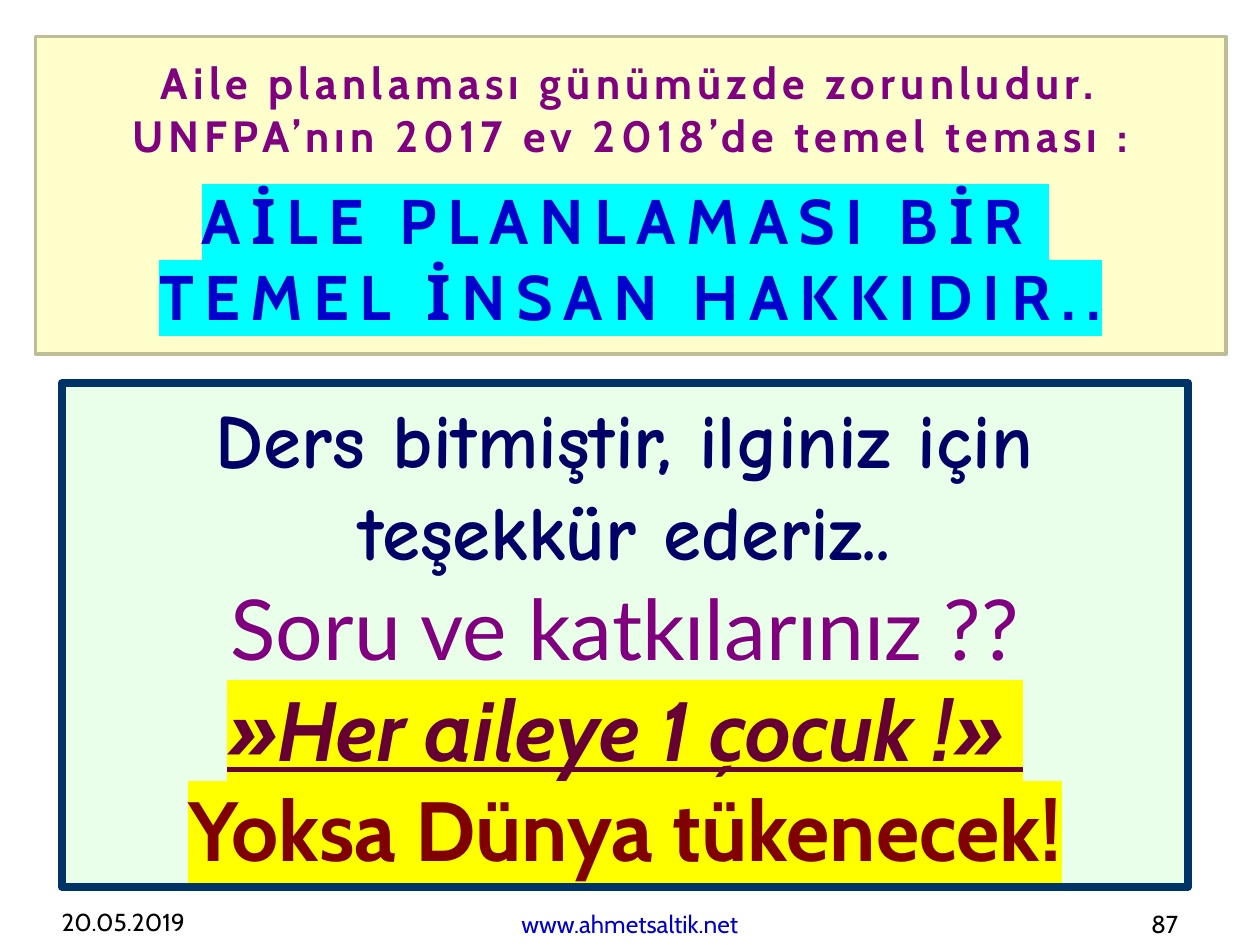
from dataclasses import dataclass

from lxml import etree
from pptx import Presentation
from pptx import util as u
from pptx.dml.color import RGBColor
from pptx.enum import shapes, text
from pptx.oxml.ns import qn

CENTER = text.PP_ALIGN.CENTER


@dataclass
class Span:
    words: str
    size: float
    color: str
    font: str = "Cabin"
    bold: bool = False
    italic: bool = False
    underline: bool = False
    spacing: float = 0
    highlight: str = ""


@dataclass
class Footer:
    left: float
    top: float
    width: float
    align: text.PP_ALIGN
    span: Span


def rgb(value: str) -> RGBColor:
    return RGBColor.from_string(value)


def add_span(para, item: Span) -> None:
    span = para.add_run()
    span.text = item.words
    font = span.font
    font.name, font.size = item.font, u.Pt(item.size)
    font.bold, font.italic, font.underline = item.bold, item.italic, item.underline
    font.color.rgb = rgb(item.color)
    props = font._element
    if item.spacing:
        props.set("spc", str(round(item.spacing * 100)))
    if item.highlight:
        mark = etree.Element(qn("a:highlight"))
        etree.SubElement(mark, qn("a:srgbClr"), val=item.highlight)
        props.find(qn("a:solidFill")).addnext(mark)


def fill_para(para, lines: list[Span], align: text.PP_ALIGN = CENTER) -> None:
    """Write the spans into one paragraph, one line each."""
    para.alignment = align
    for number, item in enumerate(lines):
        if number:
            para.add_line_break()
        add_span(para, item)


def place(box, left: float, top: float, width: float, height: float) -> None:
    box.left, box.top = u.Pt(left), u.Pt(top)
    box.width, box.height = u.Pt(width), u.Pt(height)


def style_box(box, fill: str, line: str, weight: float) -> None:
    box.fill.solid()
    box.fill.fore_color.rgb = rgb(fill)
    box.line.color.rgb = rgb(line)
    box.line.width = u.Pt(weight)


def set_frame(frame, anchor: text.MSO_ANCHOR) -> None:
    frame.word_wrap = True
    frame.auto_size = text.MSO_AUTO_SIZE.NONE
    frame.vertical_anchor = anchor


def add_footer(page, item: Footer) -> None:
    box = page.shapes.add_textbox(
        u.Pt(item.left), u.Pt(item.top), u.Pt(item.width), u.Pt(36))
    set_frame(box.text_frame, text.MSO_ANCHOR.BOTTOM)
    fill_para(box.text_frame.paragraphs[0], [item.span], item.align)


def add_closing(page) -> None:
    box = page.shapes.title
    place(box, 35.3, 218.9, 643.7, 288)
    style_box(box, "CCFFCC", "003366", 4.5)
    tint = box._element.spPr.find(qn("a:solidFill"))[0]
    etree.SubElement(tint, qn("a:alpha"), val="43000")
    set_frame(box.text_frame, text.MSO_ANCHOR.MIDDLE)
    fill_para(box.text_frame.paragraphs[0], [
        Span("Ders bitmiştir, ilginiz için teşekkür ederiz..", 44, "000066",
             "Comic Neue", bold=True),
        Span("Soru ve katkılarınız ??", 48, "800080", "Lato"),
        Span("»Her aileye 1 çocuk !» ", 48, "660033", bold=True, italic=True,
             underline=True, highlight="FFFF00"),
        Span("Yoksa Dünya tükenecek!", 48, "800000", bold=True, highlight="FFFF00"),
    ])


def add_theme(page) -> None:
    box = page.shapes.add_shape(shapes.MSO_SHAPE.RECTANGLE, 0, 0, 0, 0)
    place(box, 20.2, 20.9, 680.4, 181.4)
    box.shadow.inherit = False
    style_box(box, "FFFFCC", "BDBD97", 2)
    frame = box.text_frame
    set_frame(frame, text.MSO_ANCHOR.TOP)
    frame.margin_top = u.Pt(11)
    intro = frame.paragraphs[0]
    intro.space_after = u.Pt(12)
    fill_para(intro, [
        Span(words, 25, "800080", bold=True, spacing=3)
        for words in ("Aile planlaması günümüzde zorunludur.",
                      "UNFPA’nın 2017 ev 2018’de temel teması :")])
    fill_para(frame.add_paragraph(), [
        Span(words, 36, "0000CC", bold=True, spacing=6, highlight="00FFFF")
        for words in ("AİLE PLANLAMASI BİR ", "TEMEL İNSAN HAKKIDIR..")])


def main() -> None:
    deck = Presentation()
    deck.slide_width, deck.slide_height = u.Pt(720), u.Pt(540)
    page = deck.slides.add_slide(deck.slide_layouts[5])  # title only

    # Closing words and theme
    add_closing(page)
    add_theme(page)

    # Date, address and page number
    for item in (
        Footer(28.1, 502.6, 149.8, text.PP_ALIGN.LEFT,
               Span("20.05.2019", 14, "000000")),
        Footer(206.6, 504, 306.7, CENTER,
               Span("www.ahmetsaltik.net", 14, "0000CC")),
        Footer(530.6, 504, 149.8, text.PP_ALIGN.RIGHT,
               Span("87", 14, "000000")),
    ):
        add_footer(page, item)

    deck.save("out.pptx")


if __name__ == "__main__":
    main()
